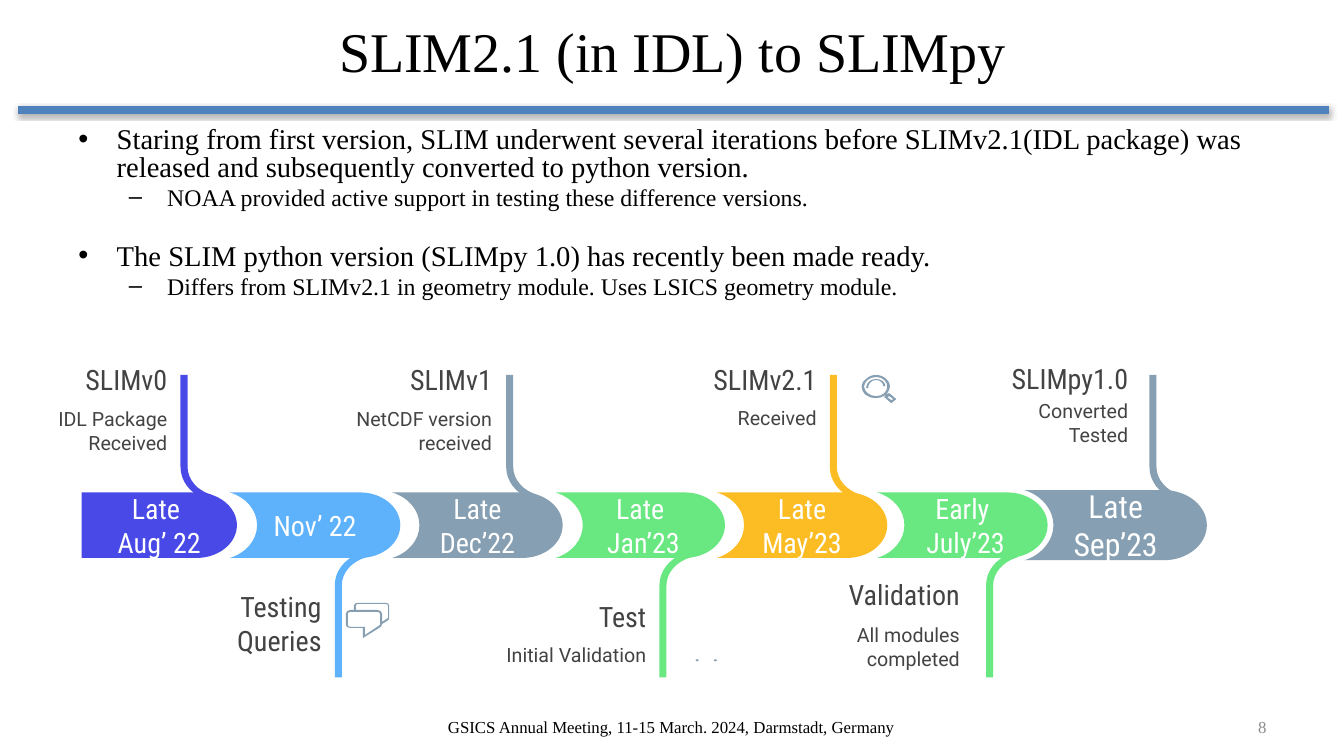
from lxml import etree
from pptx import Presentation, util as u
from pptx.dml.color import RGBColor
from pptx.enum import shapes, text
from pptx.oxml import ns
from pptx.util import Inches

SERIF, LABEL, DETAIL = "Times New Roman", "Roboto Condensed", "Roboto"
BLACK, WHITE, GRAY = "000000", "FFFFFF", "434343"
INDIGO, BLUE, SLATE, GREEN, AMBER = "4949E7", "5EB2FC", "869FB2", "69E781", "FCBD24"
CENTER, RIGHT = text.PP_ALIGN.CENTER, text.PP_ALIGN.RIGHT
TOP, MIDDLE = text.MSO_ANCHOR.TOP, text.MSO_ANCHOR.MIDDLE

BULLETS = [  # level, text, space before
    (0, "Staring from first version, SLIM underwent several iterations before "
        "SLIMv2.1(IDL package) was released and subsequently converted to python version.", 0),
    (1, "NOAA provided active support in testing these difference versions.", 3.6),
    (0, "The SLIM python version (SLIMpy 1.0) has recently been made ready.", 24),
    (1, "Differs from SLIMv2.1 in geometry module. Uses LSICS geometry module.", 3.6),
]

# band left, band right, colour, date, stem left, stem goes up
BANDS = [
    (10.16, 11.97, SLATE, ["Late", "Sep’23"], 11.4, True),
    (0.81, 2.35, INDIGO, ["Late ", "Aug’ 22"], 1.79, True),
    (3.89, 5.58, SLATE, ["Late", "Dec’22"], 5.02, True),
    (7.11, 8.8, AMBER, ["Late", "May’23"], 8.23, True),
    (2.28, 3.97, BLUE, ["Nov’ 22"], 3.32, False),
    (5.51, 7.19, GREEN, ["Late", " Jan’23"], 6.54, False),
    (8.7, 10.39, GREEN, ["Early", " July’23"], 9.78, False),
]

# right edge, width, heading top, heading, details top, details
LABELS = [
    (1.79, 1.77, 3.53, ["SLIMv0"], 3.91, ["IDL Package Received"]),
    (5.01, 1.77, 3.53, ["SLIMv1"], 3.91, ["NetCDF version received"]),
    (8.23, 1.77, 3.53, ["SLIMv2.1"], 3.91, ["Received"]),
    (11.32, 1.9, 3.52, ["SLIMpy1.0"], 3.83, ["Converted", "Tested"]),
    (3.32, 1.9, 5.95, ["Testing", "Queries"], 0, []),
    (6.54, 1.9, 5.88, ["Test"], 6.26, ["Initial Validation"]),
    (9.65, 1.9, 5.66, ["Validation"], 6.05, ["All modules completed"]),
]

# Icon contours: two numbers are a corner, six a curve
GLINT = [[(8.59, 3.85), (8.59, 3.8, 8.63, 3.76, 8.69, 3.76),
          (8.74, 3.76, 8.78, 3.79, 8.78, 3.83), (8.76, 3.83),
          (8.76, 3.8, 8.73, 3.77, 8.69, 3.77), (8.64, 3.77, 8.61, 3.81, 8.61, 3.85)]]
MAGNIFIER = [
    [(8.69, 3.74), (8.76, 3.74, 8.8, 3.79, 8.8, 3.835), (8.8, 3.88, 8.76, 3.93, 8.69, 3.93),
     (8.62, 3.93, 8.57, 3.88, 8.57, 3.835), (8.57, 3.79, 8.62, 3.74, 8.69, 3.74)],
    [(8.82, 3.93), (8.86, 3.96), (8.84, 3.97), (8.8, 3.94)],
    [(8.69, 3.72), (8.65, 3.72, 8.62, 3.73, 8.59, 3.76), (8.53, 3.8, 8.53, 3.87, 8.59, 3.92),
     (8.64, 3.96, 8.73, 3.96, 8.78, 3.92), (8.77, 3.94), (8.84, 4), (8.89, 3.96),
     (8.82, 3.9), (8.79, 3.91), (8.84, 3.86, 8.84, 3.8, 8.79, 3.76),
     (8.76, 3.73, 8.72, 3.72, 8.69, 3.72)]]
BUBBLES = [
    [(3.82, 5.99), (3.84, 5.99, 3.85, 6, 3.85, 6.01), (3.85, 6.13), (3.79, 6.17), (3.79, 6.09),
     (3.79, 6.07, 3.77, 6.05, 3.74, 6.05), (3.53, 6.05), (3.53, 6.01),
     (3.53, 6, 3.54, 5.99, 3.55, 5.99)],
    [(3.74, 6.07), (3.76, 6.07, 3.77, 6.08, 3.77, 6.09), (3.77, 6.2), (3.62, 6.3),
     (3.62, 6.22), (3.48, 6.22), (3.46, 6.22, 3.45, 6.21, 3.45, 6.2), (3.45, 6.09),
     (3.45, 6.08, 3.46, 6.07, 3.48, 6.07)],
    [(3.55, 5.98), (3.53, 5.98, 3.51, 5.99, 3.51, 6.01), (3.51, 6.05), (3.48, 6.05),
     (3.45, 6.05, 3.43, 6.07, 3.43, 6.09), (3.43, 6.2), (3.43, 6.22, 3.45, 6.23, 3.48, 6.23),
     (3.6, 6.23), (3.6, 6.33), (3.76, 6.23), (3.78, 6.22, 3.79, 6.21, 3.79, 6.19),
     (3.84, 6.16), (3.86, 6.15, 3.86, 6.14, 3.86, 6.13), (3.86, 6.01),
     (3.86, 5.99, 3.85, 5.98, 3.82, 5.98)]]


def color(value):
    return RGBColor.from_string(value)


def style(paragraph, size, font, fill):
    paragraph.font.size = u.Pt(size)
    paragraph.font.name = font
    paragraph.font.color.rgb = color(fill)


def write(shape, lines, size, font, fill, align, anchor, margins):
    frame = shape.text_frame
    frame.word_wrap = True
    frame.vertical_anchor = anchor
    frame.margin_left = frame.margin_right = Inches(margins[0])
    frame.margin_top = frame.margin_bottom = Inches(margins[1])
    for number, line in enumerate(lines):
        paragraph = frame.paragraphs[0] if number == 0 else frame.add_paragraph()
        paragraph.text = line
        paragraph.alignment = align
        style(paragraph, size, font, fill)


def add_text(slide, box, lines, size, font, fill, align, anchor=MIDDLE, margins=(0.1, 0.05)):
    shape = slide.shapes.add_textbox(*map(Inches, box))
    write(shape, lines, size, font, fill, align, anchor, margins)


def add_bullets(slide, box):
    frame = slide.shapes.add_textbox(*map(Inches, box)).text_frame
    frame.word_wrap = True
    for number, (level, line, before) in enumerate(BULLETS):
        paragraph = frame.paragraphs[0] if number == 0 else frame.add_paragraph()
        paragraph.text = line
        paragraph.level = level
        paragraph.line_spacing = 0.8
        paragraph.space_before = u.Pt(before)
        properties = paragraph._p.get_or_add_pPr()
        properties.set("marL", str(Inches(0.5 + 0.5 * level)))
        properties.set("indent", str(Inches(-0.38)))
        etree.SubElement(properties, ns.qn("a:buFont"), typeface="Arial")
        etree.SubElement(properties, ns.qn("a:buChar"), char="•–"[level])
        style(paragraph, (20.4, 17)[level], SERIF, BLACK)


def add_rule(slide):
    rule = slide.shapes.add_connector(
        shapes.MSO_CONNECTOR.STRAIGHT, Inches(0.18), Inches(1.09), Inches(13.18), Inches(1.09))
    rule.line.color.rgb = color("4F81BD")
    rule.line.width = u.Pt(6)
    effects = etree.SubElement(rule._element.spPr, ns.qn("a:effectLst"))
    shadow = etree.SubElement(effects, ns.qn("a:outerShdw"), blurRad=str(u.Pt(3.1)),
                              dist=str(u.Pt(1.6)), dir="5400000", rotWithShape="0")
    black = etree.SubElement(shadow, ns.qn("a:srgbClr"), val=BLACK)
    etree.SubElement(black, ns.qn("a:alpha"), val="30000")


def paint(shape, fill):
    shape.shadow.inherit = False
    shape.fill.solid()
    shape.fill.fore_color.rgb = color(fill)
    shape.line.fill.background()


def add_outline(slide, contours, fill):
    """Draw closed contours, then bend the sides that are given as curves."""
    ends = [[(Inches(step[-2]), Inches(step[-1])) for step in steps] for steps in contours]
    builder = slide.shapes.build_freeform(*ends[0][0])
    for number, points in enumerate(ends):
        if number:
            builder.move_to(*points[0])
        builder.add_line_segments(points[1:], close=True)
    shape = builder.convert_to_shape()
    paint(shape, fill)
    sides = shape._element.xpath(".//a:lnTo")
    steps = [step for contour in contours for step in contour[1:]]
    for side, step in zip(sides, steps):
        if len(step) == 6:
            curve = etree.Element(ns.qn("a:cubicBezTo"))
            for x, y in zip(step[::2], step[1::2]):
                etree.SubElement(curve, ns.qn("a:pt"), x=str(Inches(x) - shape.left),
                                 y=str(Inches(y) - shape.top))
            side.getparent().replace(side, curve)
    return shape


def add_stem(slide, left, up, fill):
    curve = [(0.24, 0), (0.09, 0.06, 0, 0.18, 0, 0.32), (0, 1.23), (0.07, 1.23),
             (0.07, 0.32), (0.07, 0.19, 0.17, 0.08, 0.31, 0.04), (0.31, 0)]
    base, sign = (4.95, -1) if up else (5.49, 1)
    steps = [tuple(base + sign * v if i % 2 else left + v for i, v in enumerate(step))
             for step in curve]
    add_outline(slide, [steps], fill)


def add_band(slide, left, right, fill, lines, first, last):
    scale = 1.07 if last else 1
    middle, half = 5.21, 0.325 * scale
    top, bottom, shoulder = middle - half, middle + half, right - 0.4 * scale
    notch, tip = left + 0.27 * scale, 0.18 * scale
    bend = left + 0.16 * scale
    tail = [(left, bottom)] if first else [
        (bend, top + 0.05, notch, middle - 0.15, notch, middle),
        (notch, middle + 0.15, bend, bottom - 0.05, left, bottom)]
    steps = [(left, top), *tail, (shoulder, bottom),
             (right - tip, bottom, right, middle + tip, right, middle),
             (right, middle - tip, right - tip, top, shoulder, top)]
    band = add_outline(slide, [steps], fill)
    write(band, lines, 22.7 if last else 20, LABEL, WHITE, CENTER, MIDDLE, (0.13, 0.13))


def add_icons(slide):
    for contours in (GLINT, MAGNIFIER, BUBBLES):
        add_outline(slide, contours, SLATE)
    for left in (6.9, 7.08):
        dot = slide.shapes.add_shape(shapes.MSO_SHAPE.OVAL, Inches(left), Inches(6.54),
                                     Inches(0.03), Inches(0.02))
        paint(dot, SLATE)


def main():
    presentation = Presentation()
    presentation.slide_width, presentation.slide_height = Inches(13.33), Inches(7.5)
    slide = presentation.slides.add_slide(presentation.slide_layouts[6])

    # Title, rule and bullets
    add_rule(slide)
    add_text(slide, (1.67, 0.11, 10, 0.77), ["SLIM2.1 (in IDL) to SLIMpy"], 40, SERIF, BLACK, CENTER)
    add_bullets(slide, (0.56, 1.22, 12, 1.93))

    # Timeline
    for left, right, fill, date, stem, up in BANDS:
        add_stem(slide, stem, up, fill)
        add_band(slide, left, right, fill, date, left < 1, left > 10)
    for right, width, top, heading, details_top, details in LABELS:
        add_text(slide, (right - width, top, width, 0.47), heading, 20, LABEL, GRAY, RIGHT,
                 MIDDLE, (0.13, 0.13))
        if details:
            add_text(slide, (right - width, details_top, width, 0.59), details, 14, DETAIL, GRAY,
                     RIGHT, TOP, (0.13, 0.13))
    add_icons(slide)

    # Footer
    add_text(slide, (2.66, 7, 8, 0.43),
             ["GSICS Annual Meeting, 11-15 March. 2024, Darmstadt, Germany"], 12, SERIF, BLACK, CENTER)
    add_text(slide, (10.66, 7, 2, 0.43), ["8"], 12, SERIF, "8C8C8C", RIGHT)
    presentation.save("out.pptx")


if __name__ == "__main__":
    main()
